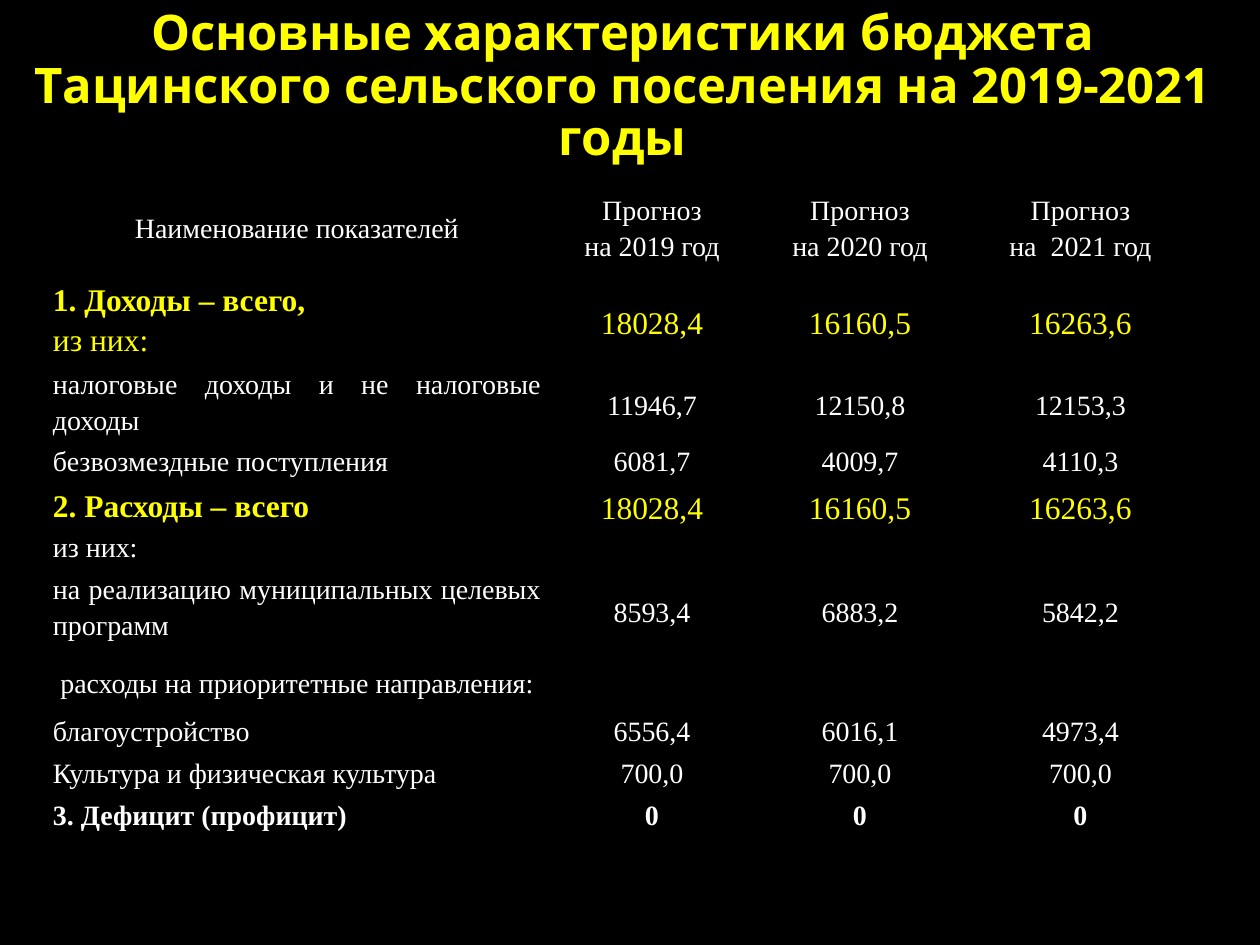
from lxml import etree
from pptx import Presentation
from pptx.dml.color import RGBColor
from pptx.enum.text import MSO_ANCHOR as ANCHOR, PP_ALIGN as ALIGN
from pptx.oxml.ns import qn
from pptx.util import Pt

PX = 914400 // 126
WHITE, YELLOW, BLACK = "FFFFFF", "FFFF00", "000000"
C, J, T, M = ALIGN.CENTER, ALIGN.JUSTIFY, ANCHOR.TOP, ANCHOR.MIDDLE

# Per row kind: text size and colour, then bold for label's first line and for figures
KINDS = {
    "plain": (16, WHITE, False, False),
    "total": (18, YELLOW, True, False),
    "balance": (16, WHITE, True, True),
}

# Row height, kind, label alignment, label anchor, figure anchor, cell texts
ROWS = [
    (103, "plain", C, M, M, ["Наименование показателей", "Прогноз\nна 2019 год",
                             "Прогноз\nна 2020 год", "Прогноз\nна  2021 год"]),
    (83, "total", J, T, M, ["1. Доходы – всего,\nиз них:", "18028,4", "16160,5", "16263,6"]),
    (62, "plain", J, T, M, ["налоговые доходы и не налоговые доходы",
                            "11946,7", "12150,8", "12153,3"]),
    (42, "plain", J, T, T, ["безвозмездные поступления", "6081,7", "4009,7", "4110,3"]),
    (42, "total", J, T, M, ["2. Расходы – всего", "18028,4", "16160,5", "16263,6"]),
    (42, "plain", J, T, T, ["из них:", "", "", ""]),
    (83, "plain", J, T, M, ["на реализацию муниципальных целевых программ",
                            "8593,4", "6883,2", "5842,2"]),
    (59, "plain", C, M, M, ["расходы на приоритетные направления:", "", "", ""]),
    (42, "plain", J, T, T, ["благоустройство", "6556,4", "6016,1", "4973,4"]),
    (42, "plain", J, T, T, ["Культура и физическая культура", "700,0", "700,0", "700,0"]),
    (42, "balance", J, T, T, ["3. Дефицит (профицит)", "0", "0", "0"]),
]
COLUMNS = [506, 204, 212, 229]


def px(n):
    return n * PX


def rgb(value):
    return RGBColor.from_string(value)


def set_all(target, values):
    for name, value in values.items():
        setattr(target, name, value)


class Deck:
    title_font = "Open Sans"
    body_font = "Times New Roman"

    def __init__(self, width, height):
        self.prs = Presentation()
        set_all(self.prs, {"slide_width": px(width), "slide_height": px(height)})

    def add_slide(self, color):
        self.s = self.prs.slides.add_slide(self.prs.slide_layouts[6])
        fill = self.s.background.fill
        fill.solid()
        fill.fore_color.rgb = rgb(color)

    def paragraph(self, p, text, align, spacing, font, size, color, bold):
        set_all(p, {"alignment": align, "line_spacing": spacing})
        if text:
            r = p.add_run()
            r.text = text
            set_all(r.font, {"name": font, "size": Pt(size), "bold": bold})
            r.font.color.rgb = rgb(color)

    def title(self, text, left, top, width, height, bottom_inset):
        sp = self.s.shapes.add_textbox(px(left), px(top), px(width), px(height))
        tf = sp.text_frame
        set_all(tf, {"word_wrap": True, "vertical_anchor": M,
                     "margin_bottom": px(bottom_inset)})
        self.paragraph(tf.paragraphs[0], text, C, 0.9, self.title_font, 28, YELLOW, True)

    def border(self, cell, color):
        """Draw all four cell edges; they must precede the fill in tcPr."""
        tc_pr = cell._tc.get_or_add_tcPr()
        for i, edge in enumerate(("lnL", "lnR", "lnT", "lnB")):
            ln = etree.Element(qn(f"a:{edge}"), w=str(Pt(1)))
            fill = etree.SubElement(ln, qn("a:solidFill"))
            etree.SubElement(fill, qn("a:srgbClr"), val=color)
            tc_pr.insert(i, ln)

    def cell(self, cell, text, align, anchor, size, color, bold, rest_bold):
        set_all(cell, {"margin_left": px(9), "margin_right": px(9), "margin_top": 0,
                       "margin_bottom": 0, "vertical_anchor": anchor})
        cell.fill.background()
        self.border(cell, BLACK)
        tf = cell.text_frame
        for i, line in enumerate(text.split("\n")):
            p = tf.add_paragraph() if i else tf.paragraphs[0]
            self.paragraph(p, line, align, 1.15, self.body_font, size, color,
                           rest_bold if i else bold)

    def table(self, left, top, columns, rows):
        height = sum(row[0] for row in rows)
        table = self.s.shapes.add_table(len(rows), len(columns), px(left), px(top),
                                        px(sum(columns)), px(height)).table
        set_all(table, {"first_row": False, "horz_banding": False})
        for column, width in zip(table.columns, columns):
            column.width = px(width)
        for i, (height, kind, align, label_anchor, anchor, texts) in enumerate(rows):
            table.rows[i].height = px(height)
            size, color, label_bold, bold = KINDS[kind]
            for j, text in enumerate(texts):
                look = (C, anchor, size, color, bold) if j else (
                    align, label_anchor, size, color, label_bold)
                self.cell(table.cell(i, j), text, *look, bold)


def main():
    deck = Deck(1260, 945)
    deck.add_slide(BLACK)
    deck.title("Основные характеристики бюджета Тацинского сельского поселения "
               "на 2019-2021 годы", 0, 38, 1245, 157, 65)
    deck.table(44, 175, COLUMNS, ROWS)
    deck.prs.save("out.pptx")


if __name__ == "__main__":
    main()
